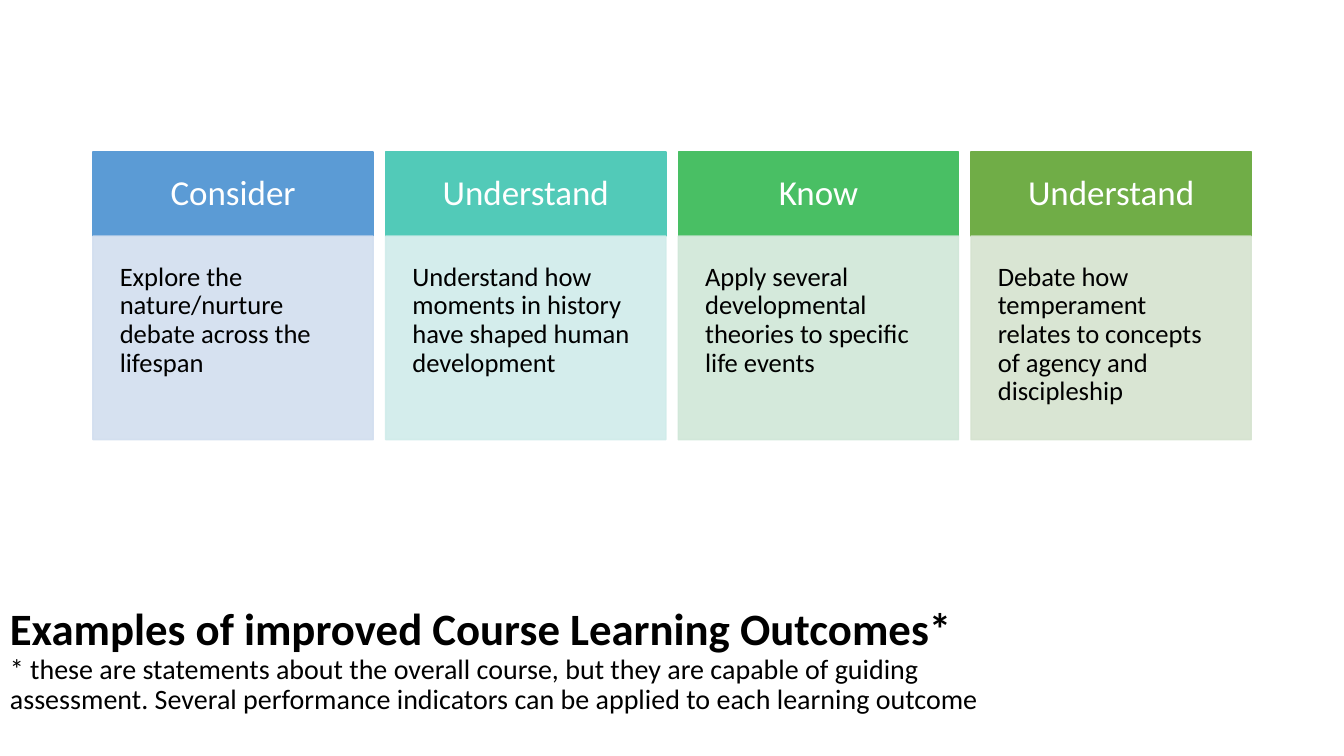
from lxml.etree import SubElement
from pptx import Presentation
from pptx.dml.color import RGBColor
from pptx.enum.shapes import MSO_SHAPE as SHAPE
from pptx.enum.text import MSO_ANCHOR as ANCHOR, PP_ALIGN as ALIGN
from pptx.oxml.ns import qn
from pptx.util import Pt

WHITE = RGBColor(0xFF, 0xFF, 0xFF)
BLACK = RGBColor(0x00, 0x00, 0x00)
BLUE, PALE_BLUE = RGBColor(0x5B, 0x9B, 0xD5), RGBColor(0xD2, 0xDE, 0xEF)
TEAL, PALE_TEAL = RGBColor(0x52, 0xCA, 0xB8), RGBColor(0xD0, 0xEC, 0xEA)
GREEN, PALE_GREEN = RGBColor(0x49, 0xBF, 0x64), RGBColor(0xD0, 0xE7, 0xD8)
OLIVE, PALE_OLIVE = RGBColor(0x70, 0xAD, 0x47), RGBColor(0xD5, 0xE3, 0xCF)

LEFT, TOP = 66.4, 108.7
COLUMN_WIDTH, COLUMN_PITCH = 200.2, 209.05
HEADER_HEIGHT, BODY_HEIGHT = 60, 145.4

HEADER = {"size": 25, "color": WHITE, "inset": 16, "align": ALIGN.CENTER,
          "anchor": ANCHOR.MIDDLE}
BODY = {"size": 19, "color": BLACK, "inset": 19.2, "align": ALIGN.LEFT,
        "anchor": ANCHOR.TOP}

OUTCOMES = [
    ("Consider", "Explore the nature/nurture debate across the lifespan",
     BLUE, PALE_BLUE),
    ("Understand",
     "Understand how moments in history have shaped human development",
     TEAL, PALE_TEAL),
    ("Know", "Apply several developmental theories to specific life events",
     GREEN, PALE_GREEN),
    ("Understand",
     "Debate how temperament relates to concepts of agency and discipleship",
     OLIVE, PALE_OLIVE),
]
TITLE = "Examples of improved Course Learning Outcomes*"
FOOTNOTE = ("* these are statements about the overall course, but they are "
            "capable of guiding assessment. Several performance indicators "
            "can be applied to each learning outcome")


def add_run(p, text, size, color, bold=False):
    r = p.add_run()
    r.text = text
    font = {"name": "Calibri", "size": Pt(size), "bold": bold}
    for name, value in font.items():
        setattr(r.font, name, value)
    r.font.color.rgb = color


def set_opacity(sp, percent):
    """Apply one opacity to the solid fill and the outline."""
    for color in sp._element.spPr.iter(qn("a:srgbClr")):
        SubElement(color, qn("a:alpha"), val=str(percent * 1000))


def add_panel(slide, x, y, height, color, text, style):
    sp = slide.shapes.add_shape(SHAPE.RECTANGLE, Pt(x), Pt(y),
                                Pt(COLUMN_WIDTH), Pt(height))
    sp.shadow.inherit = False
    sp.fill.solid()
    sp.fill.fore_color.rgb = color
    sp.line.color.rgb = color
    sp.line.width = Pt(1)
    tf = sp.text_frame
    tf.word_wrap = True
    tf.vertical_anchor = style["anchor"]
    for side in ("left", "top", "right", "bottom"):
        setattr(tf, f"margin_{side}", Pt(style["inset"]))
    p = tf.paragraphs[0]
    p.alignment = style["align"]
    p.line_spacing = 0.9
    add_run(p, text, style["size"], style["color"])
    return sp


def add_outcome(slide, x, verb, statement, color, pale):
    add_panel(slide, x, TOP, HEADER_HEIGHT, color, verb, HEADER)
    body = add_panel(slide, x, TOP + HEADER_HEIGHT, BODY_HEIGHT, pale,
                     statement, BODY)
    set_opacity(body, 90)


def add_title(slide):
    sp = slide.shapes.add_textbox(Pt(0), Pt(422.6), Pt(756), Pt(99.4))
    tf = sp.text_frame
    tf.word_wrap = True
    tf.vertical_anchor = ANCHOR.MIDDLE
    p = tf.paragraphs[0]
    p.line_spacing = 0.9
    add_run(p, TITLE, 32, BLACK, bold=True)
    p.add_line_break()
    add_run(p, FOOTNOTE, 20, BLACK)


def main():
    prs = Presentation()
    prs.slide_width, prs.slide_height = Pt(960), Pt(540)
    slide = prs.slides.add_slide(prs.slide_layouts[6])
    add_title(slide)
    for i, outcome in enumerate(OUTCOMES):
        add_outcome(slide, LEFT + i * COLUMN_PITCH, *outcome)
    prs.save("out.pptx")


if __name__ == "__main__":
    main()
